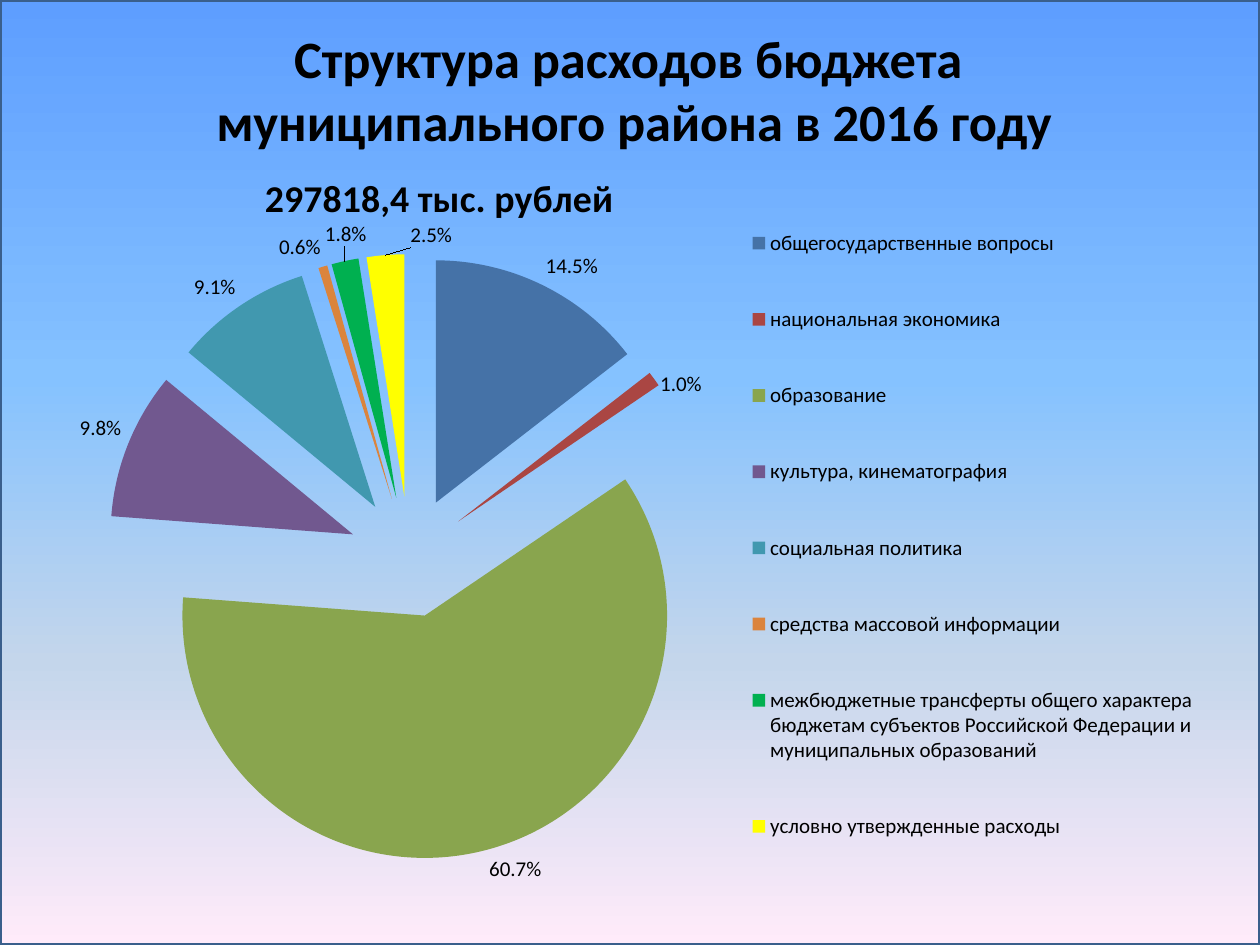
from lxml import etree
from pptx import Presentation
from pptx import util as u
from pptx.chart.data import CategoryChartData
from pptx.dml.color import RGBColor
from pptx.enum import chart as ch, shapes, text
from pptx.oxml import ns, parse_xml

PX = 914400 / 126
FONT = "Calibri"
TOTAL = "297818,4 тыс. рублей"
SKY = [(0, "5E9EFF"), (40, "85C2FF"), (70, "C4D6EB"), (100, "FFEBFA")]
EXPENSES = [
    ("общегосударственные вопросы", 0.145, "4572A7"),
    ("национальная экономика", 0.01, "AA4643"),
    ("образование", 0.607, "89A54E"),
    ("культура, кинематография", 0.098, "71588F"),
    ("социальная политика", 0.091, "4198AF"),
    ("средства массовой информации", 0.006, "DB843D"),
    ("межбюджетные трансферты общего характера бюджетам субъектов "
     "Российской Федерации и муниципальных образований", 0.018, "00B050"),
    ("условно утвержденные расходы", 0.025, "FFFF00"),
]
MOVED_LABELS = {1: (0, 0.03), 6: (0.02, -0.01), 7: (0.04, 0)}


def px(*lengths):
    """Turn pixel lengths into EMU."""
    return [u.Emu(round(length * PX)) for length in lengths]


def color(hex_value):
    """Return the colour for a hex string."""
    return RGBColor.from_string(hex_value)


def style(font, size, bold=False):
    """Set the face, size, weight and black colour of a font."""
    font.name, font.size, font.bold = FONT, u.Pt(size), bold
    font.color.rgb = color("000000")


def manual_layout(**parts):
    """Build a chart layout element from fractions and modes."""
    order = ("layoutTarget", "xMode", "yMode", "x", "y", "w", "h")
    inner = "".join(f'<c:{key} val="{parts[key]}"/>' for key in order if key in parts)
    return parse_xml(f'<c:layout {ns.nsdecls("c")}><c:manualLayout>{inner}'
                     '</c:manualLayout></c:layout>')


def place(element, layout, after=None):
    """Replace an element's layout, after a named child or first."""
    for old in element.findall(ns.qn("c:layout")):
        element.remove(old)
    if after is None:
        element.insert(0, layout)
    else:
        element.find(ns.qn(after)).addnext(layout)


def add_backdrop(slide, box):
    """Draw the outlined gradient backdrop."""
    backdrop = slide.shapes.add_shape(shapes.MSO_SHAPE.RECTANGLE, *px(*box))
    backdrop.shadow.inherit = False
    backdrop.line.color.rgb = color("3A5F8C")
    backdrop.line.width = u.Pt(2)
    backdrop.fill.gradient()
    backdrop.fill.gradient_angle = 270
    stops = backdrop.element.spPr.find(".//" + ns.qn("a:gsLst"))
    for stop in list(stops):
        stops.remove(stop)
    for percent, shade in SKY:
        stop = etree.SubElement(stops, ns.qn("a:gs"), pos=str(percent * 1000))
        etree.SubElement(stop, ns.qn("a:srgbClr"), val=shade)
    slide.shapes.element.insert(2, backdrop.element)


def add_title(slide, box):
    """Place the two-line slide title."""
    title = slide.shapes.title
    title.left, title.top, title.width, title.height = px(*box)
    frame = title.text_frame
    frame.word_wrap = True
    frame.auto_size = text.MSO_AUTO_SIZE.NONE
    frame.vertical_anchor = text.MSO_ANCHOR.TOP
    heading = frame.paragraphs[0]
    heading.alignment = text.PP_ALIGN.CENTER
    for number, line in enumerate(("Структура расходов бюджета ",
                                   "муниципального района в 2016 году")):
        if number:
            heading.add_line_break()
        run = heading.add_run()
        run.text = line
        style(run.font, 30, True)


def format_labels(plot, slices):
    """Show percentages outside the slices and shift the crowded ones."""
    labels = slices.data_labels
    labels.show_value = True
    labels.number_format, labels.number_format_is_linked = "0.0%", False
    labels.position = ch.XL_LABEL_POSITION.OUTSIDE_END
    style(labels.font, 12)
    leader = labels._element.find(ns.qn("c:showLeaderLines"))
    if leader is None:
        leader = etree.SubElement(labels._element, ns.qn("c:showLeaderLines"))
    leader.set("val", "1")
    for index, (x, y) in MOVED_LABELS.items():
        label = slices.points[index].data_label
        style(label.font, 12)
        label.position = ch.XL_LABEL_POSITION.OUTSIDE_END
        element = labels._element.xpath(f'c:dLbl[c:idx/@val="{index}"]')[0]
        place(element, manual_layout(x=x, y=y), "c:idx")
        number_format = parse_xml(f'<c:numFmt {ns.nsdecls("c")} '
                                  'formatCode="0.0%" sourceLinked="0"/>')
        element.find(ns.qn("c:layout")).addnext(number_format)


def add_expenses_pie(slide, box):
    """Add the exploded pie of expenses with its title and legend."""
    data = CategoryChartData(number_format="0.0%")
    data.categories = [name for name, _, _ in EXPENSES]
    data.add_series(TOTAL, [share for _, share, _ in EXPENSES])
    pie = slide.shapes.add_chart(ch.XL_CHART_TYPE.PIE, *px(*box), data).chart
    style(pie.font, 18)
    plot = pie.plots[0]
    plot.vary_by_categories = True
    slices = plot.series[0]
    for index, (_, _, shade) in enumerate(EXPENSES):
        fill = slices.points[index].format.fill
        fill.solid()
        fill.fore_color.rgb = color(shade)
    explosion = parse_xml(f'<c:explosion {ns.nsdecls("c")} val="25"/>')
    slices._element.find(ns.qn("c:dPt")).addprevious(explosion)
    format_labels(plot, slices)

    pie.has_title = True
    total = pie.chart_title.text_frame.paragraphs[0].add_run()
    total.text = TOTAL
    style(total.font, 21.6, True)
    place(pie.chart_title._element,
          manual_layout(xMode="edge", yMode="edge", x=0.18, y=0.01), "c:tx")

    pie.has_legend = True
    legend = pie.legend
    legend.position = ch.XL_LEGEND_POSITION.RIGHT
    legend.include_in_layout = False
    style(legend.font, 12)
    place(legend._element, manual_layout(
        xMode="edge", yMode="edge", x=0.6, y=0.03, w=0.39, h=0.95), "c:legendPos")
    place(plot._element.getparent(), manual_layout(
        layoutTarget="inner", xMode="edge", yMode="edge",
        x=0.01, y=0.13, w=0.6, h=0.81))


def main():
    """Build and save the slide."""
    deck = Presentation()
    deck.slide_width, deck.slide_height = px(1260, 945)
    slide = deck.slides.add_slide(deck.slide_layouts[5])
    add_backdrop(slide, (0, 0, 1260, 945))
    add_title(slide, (39, 20, 1191, 140))
    add_expenses_pie(slide, (49, 157, 1162, 748))
    deck.save("out.pptx")


if __name__ == "__main__":
    main()
